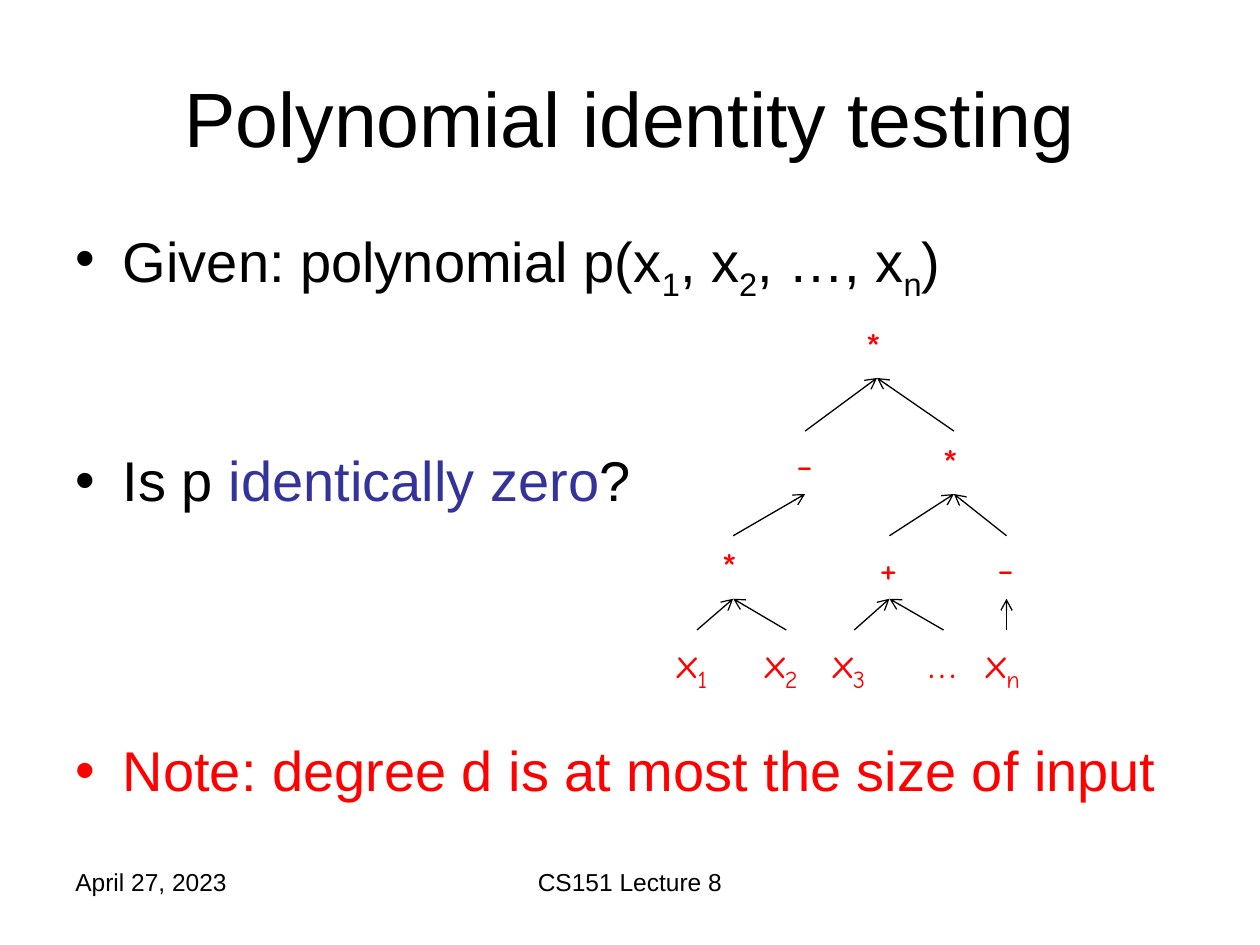
from lxml import etree
from pptx import Presentation
from pptx.dml.color import RGBColor
from pptx.enum.shapes import MSO_CONNECTOR
from pptx.enum.text import MSO_ANCHOR, MSO_AUTO_SIZE, PP_ALIGN
from pptx.oxml.ns import qn
from pptx.util import Cm, Pt

STRAIGHT = MSO_CONNECTOR.STRAIGHT
MIDDLE, TOP = MSO_ANCHOR.MIDDLE, MSO_ANCHOR.TOP
LEFT, CENTER = PP_ALIGN.LEFT, PP_ALIGN.CENTER
FIXED, GROW = MSO_AUTO_SIZE.NONE, MSO_AUTO_SIZE.SHAPE_TO_FIT_TEXT

BLACK, BLUE, RED = "000000", "333399", "FF0000"
SUBSCRIPT = "-25000"

# Each bullet: space before in points, then runs of (text, colour, is subscript)
BULLETS = [
    (8, [("Given: polynomial p(x", BLACK, False), ("1", BLACK, True),
         (", x", BLACK, False), ("2", BLACK, True),
         (", …, x", BLACK, False), ("n", BLACK, True), (")", BLACK, False)]),
    (90, [("Is p ", BLACK, False), ("identically zero", BLUE, False),
          ("?", BLACK, False)]),
    (131, [("Note: degree d is at most the size of input", RED, False)]),
]

# Expression tree: (label, centre x in cm, children)
TREE = ("*", 17.68, [
    ("-", 16.23, [
        ("*", 14.78, [("x1", 14.05, []), ("x2", 15.85, [])]),
    ]),
    ("*", 19.23, [
        ("+", 17.93, [("x3", 17.22, []), ("…", 19.02, [])]),
        ("-", 20.29, [("xn", 20.29, [])]),
    ]),
])
LEVEL_TOPS = [6.35, 8.69, 10.8, 12.7]
NODE_HEIGHT = 1.27
NODE_WIDTHS = {"*": 0.97, "-": 0.86, "+": 0.91, "…": 1.09,
               "x1": 1.27, "x2": 1.35, "x3": 1.35, "xn": 1.3}


def color(hex_string):
    return RGBColor.from_string(hex_string)


class SlideBuilder:
    text_font = "Arial"
    tree_font = "Comic Neue"

    def __init__(self, presentation):
        self.slide = presentation.slides.add_slide(presentation.slide_layouts[1])

    def place(self, shape, left, top, width, height):
        shape.left, shape.top = Cm(left), Cm(top)
        shape.width, shape.height = Cm(width), Cm(height)

    def add_run(self, paragraph, text, size, hex_color, font, subscript=False):
        run = paragraph.add_run()
        run.text = text
        run.font.size = Pt(size)
        run.font.name = font
        run.font.color.rgb = color(hex_color)
        if subscript:
            run._r.get_or_add_rPr().set("baseline", SUBSCRIPT)

    def title(self, text):
        shape = self.slide.shapes.title
        self.place(shape, 1.27, 0.76, 22.86, 3.18)
        frame = shape.text_frame
        frame.auto_size = FIXED
        frame.vertical_anchor = MIDDLE
        frame.paragraphs[0].alignment = CENTER
        self.add_run(frame.paragraphs[0], text, 44, BLACK, self.text_font)

    def bullets(self, items):
        shape = self.slide.placeholders[1]
        self.place(shape, 1.27, 4.45, 22.86, 12.57)
        frame = shape.text_frame
        frame.auto_size = FIXED
        frame.vertical_anchor = TOP
        for index, (space_before, runs) in enumerate(items):
            paragraph = frame.add_paragraph() if index else frame.paragraphs[0]
            paragraph.line_spacing = 0.9
            paragraph.space_before = Pt(space_before)
            for text, hex_color, subscript in runs:
                self.add_run(paragraph, text, 32, hex_color, self.text_font, subscript)

    def footer(self, text, left, width, alignment):
        box = self.slide.shapes.add_textbox(Cm(left), Cm(17.35), Cm(width), Cm(1.32))
        box.text_frame.word_wrap = True
        paragraph = box.text_frame.paragraphs[0]
        paragraph.alignment = alignment
        self.add_run(paragraph, text, 14, BLACK, self.text_font)

    def node(self, label, center, top):
        width = NODE_WIDTHS[label]
        box = self.slide.shapes.add_textbox(
            Cm(center - width / 2), Cm(top), Cm(width), Cm(NODE_HEIGHT))
        box.text_frame.word_wrap = False
        box.text_frame.auto_size = GROW
        paragraph = box.text_frame.paragraphs[0]
        self.add_run(paragraph, label[0], 24, RED, self.tree_font)
        if label[1:]:
            self.add_run(paragraph, label[1:], 24, RED, self.tree_font, True)

    def arrow(self, start_x, start_y, end_x, end_y):
        connector = self.slide.shapes.add_connector(
            STRAIGHT, Cm(start_x), Cm(start_y), Cm(end_x), Cm(end_y))
        connector.line.color.rgb = color(BLACK)
        connector.line.width = Pt(0.75)
        etree.SubElement(connector.line._get_or_add_ln(), qn("a:tailEnd"), type="arrow")
        etree.SubElement(connector._element.spPr, qn("a:effectLst"))

    def tree(self, branch, level=0):
        """Draw a node, its subtrees, and an arrow from each child up to it."""
        label, center, children = branch
        top = LEVEL_TOPS[level]
        self.node(label, center, top)
        for child in children:
            self.tree(child, level + 1)
            self.arrow(child[1], LEVEL_TOPS[level + 1], center, top + NODE_HEIGHT)


def main():
    presentation = Presentation()
    presentation.slide_width, presentation.slide_height = Cm(25.4), Cm(19.05)
    builder = SlideBuilder(presentation)
    builder.title("Polynomial identity testing")
    builder.bullets(BULLETS)
    builder.tree(TREE)
    builder.footer("April 27, 2023", 1.27, 5.92, LEFT)
    builder.footer("CS151 Lecture 8", 8.68, 8.04, CENTER)
    presentation.save("out.pptx")


if __name__ == "__main__":
    main()
